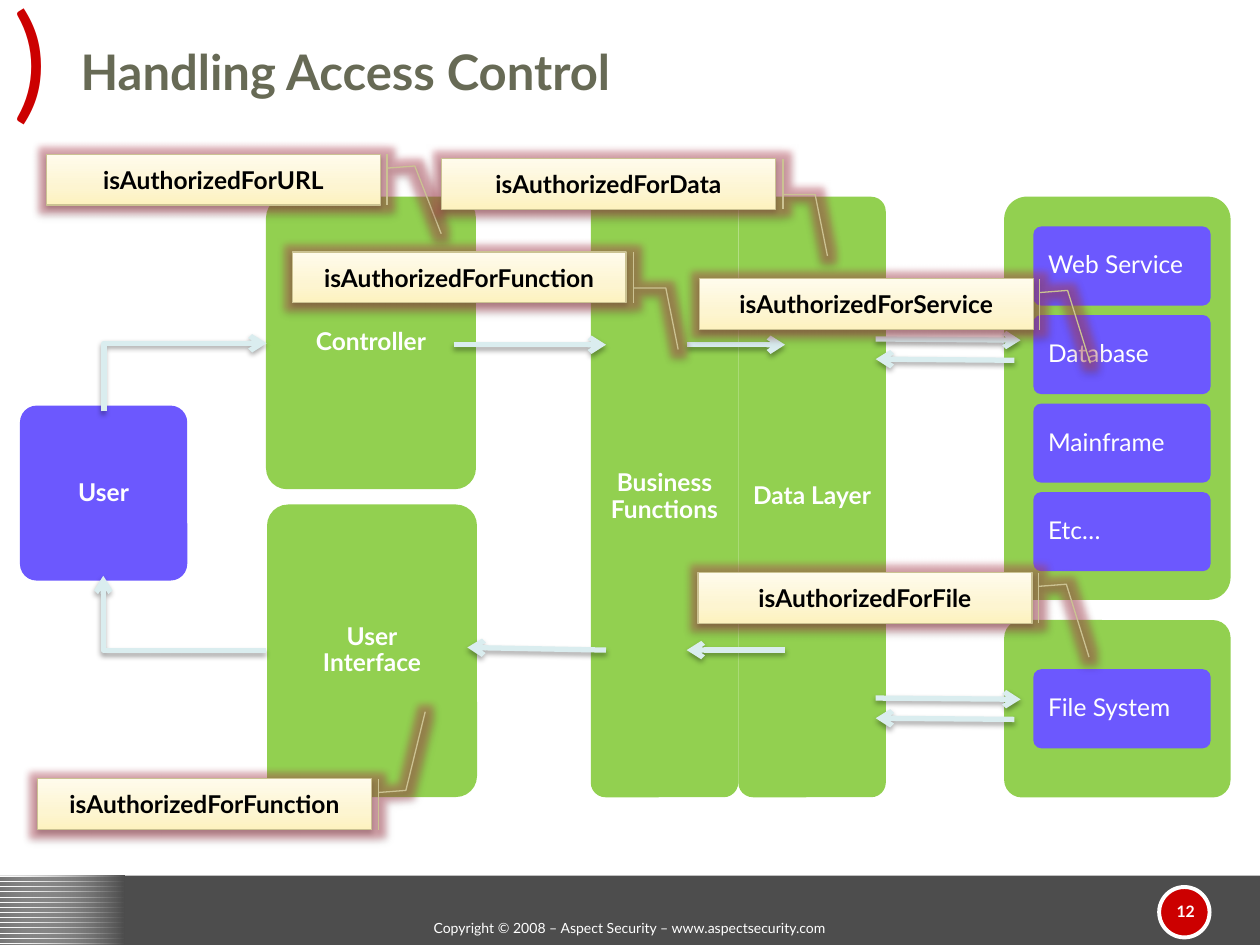
from lxml import etree
from pptx import Presentation
from pptx.dml.color import RGBColor
from pptx.enum.dml import MSO_PATTERN as Pattern
from pptx.enum.shapes import MSO_CONNECTOR as Link, MSO_SHAPE as Shape
from pptx.enum.text import MSO_ANCHOR as Anchor, MSO_AUTO_SIZE as Auto, PP_ALIGN as Align
from pptx.oxml import parse_xml
from pptx.oxml.ns import nsdecls, qn
from pptx.util import Pt

WHITE = RGBColor(0xFF, 0xFF, 0xFF)
BLACK = RGBColor(0, 0, 0)
GRAY = RGBColor(0x4D, 0x4D, 0x4D)
RED = RGBColor(0xCC, 0, 0)
OLIVE = RGBColor(0x67, 0x6A, 0x55)
GREEN = RGBColor(0x92, 0xD0, 0x50)
VIOLET = RGBColor(0x6C, 0x58, 0xFE)
ICE = RGBColor(0xDA, 0xED, 0xEF)
SAND = RGBColor(0xCB, 0xC2, 0x92)
ROSE = RGBColor(0xC0, 0x48, 0x5A)
CREAM = [(0, RGBColor(0xFD, 0xF2, 0xBF), 100),
         (35, RGBColor(0xFD, 0xF5, 0xD1), 100),
         (100, RGBColor(0xFF, 0xFB, 0xEC), 100)]
FADE = [(0, GRAY, 100), (100, WHITE, 23)]

# Leader bends of the callouts: y, x pairs as parts of the box
LOW = (0.271, 1.02, 0.229, 1.103, 1.665, 1.171)
SIDE = (0.711, 1.023, 0.709, 1.119, 1.92, 1.156)
URL = LOW[:4] + (1.565, 1.182)
HIGH = LOW[:4] + (-1.322, 1.161)


def put(obj, form):
    for key, value in form.items():
        setattr(obj, key, value)


def write(shape, text, color, size=14, bold=True, align=Align.CENTER, frame=None):
    """Fill a shape's text frame with one styled paragraph."""
    body = shape.text_frame
    put(body, {"word_wrap": True, "vertical_anchor": Anchor.MIDDLE, **(frame or {})})
    para = body.paragraphs[0]
    para.text = text
    para.alignment = align
    for run in para.runs:
        put(run.font, {"name": "Lato", "size": Pt(size), "bold": bold})
        run.font.color.rgb = color
    return para


def add_box(slide, kind, box, color=None, line=None, width=1):
    shape = slide.shapes.add_shape(kind, *map(Pt, box))
    shape.shadow.inherit = False
    if color is not None:
        shape.fill.solid()
        shape.fill.fore_color.rgb = color
    if line is None:
        shape.line.fill.background()
    else:
        shape.line.color.rgb = line
        shape.line.width = Pt(width)
    return shape


def add_card(slide, box, color, text="", **form):
    """Rounded panel or tile with an optional label."""
    card = add_box(slide, Shape.ROUNDED_RECTANGLE, box, color)
    card.adjustments[0] = 0.1
    if text:
        write(card, text, WHITE, **form).line_spacing = 0.9


def add_text(slide, box, text, color, size, **form):
    write(slide.shapes.add_textbox(*map(Pt, box)), text, color, size, **form)


def blend(shape, stops, angle):
    """Gradient fill with any number of stops; angle in degrees, clockwise."""
    marks = "".join(
        f'<a:gs pos="{pos * 1000}"><a:srgbClr val="{color}">'
        f'<a:alpha val="{alpha * 1000}"/></a:srgbClr></a:gs>'
        for pos, color, alpha in stops)
    fill = parse_xml(
        f'<a:gradFill {nsdecls("a")} rotWithShape="1"><a:gsLst>{marks}</a:gsLst>'
        f'<a:lin ang="{angle * 60000}" scaled="0"/></a:gradFill>')
    shape._element.spPr.find(qn("a:prstGeom")).addnext(fill)


def cast(shape, alpha, dist, glow=None):
    """Soft shadow straight below, with an optional glow."""
    props = shape._element.spPr
    for old in props.findall(qn("a:effectLst")):
        props.remove(old)
    halo = "" if glow is None else (
        f'<a:glow rad="{Pt(8)}"><a:srgbClr val="{glow}">'
        '<a:alpha val="40000"/></a:srgbClr></a:glow>')
    props.append(parse_xml(
        f'<a:effectLst {nsdecls("a")}>{halo}'
        f'<a:outerShdw blurRad="{Pt(3.1)}" dist="{Pt(dist)}" dir="5400000" rotWithShape="0">'
        f'<a:srgbClr val="000000"><a:alpha val="{alpha * 1000}"/></a:srgbClr>'
        '</a:outerShdw></a:effectLst>'))


def add_arrow(slide, ends, turn=None):
    """Arrow to the second point; a turn in degrees makes it a one-bend elbow."""
    kind = Link.STRAIGHT if turn is None else Link.ELBOW
    arrow = slide.shapes.add_connector(kind, *map(Pt, ends))
    arrow.line.color.rgb = ICE
    arrow.line.width = Pt(3)
    props = arrow._element.spPr
    etree.SubElement(props.find(qn("a:ln")), qn("a:tailEnd"), type="arrow")
    if turn is not None:
        props.find(qn("a:prstGeom")).set("prst", "bentConnector2")
        props.find(qn("a:xfrm")).set("rot", str(turn * 60000))
    cast(arrow, 35, 1.8)


def add_note(slide, left, top, text, bends):
    note = add_box(slide, Shape.LINE_CALLOUT_2_BORDER_AND_ACCENT_BAR,
                   (left, top, 190.8, 29), line=SAND, width=0.75)
    for i, bend in enumerate(bends):
        note.adjustments[i] = bend
    blend(note, CREAM, 270)
    cast(note, 38, 1.6, ROSE)
    write(note, text, BLACK)


def add_frame(slide):
    # Footer band with its striped, fading corner
    add_box(slide, Shape.RECTANGLE, (0, 500.4, 720, 39.6), GRAY)
    corner = (0, 500.4, 71.3, 39.6)
    stripes = add_box(slide, Shape.RECTANGLE, corner)
    stripes.fill.patterned()
    stripes.fill.pattern = Pattern.DARK_HORIZONTAL
    stripes.fill.fore_color.rgb = GRAY
    stripes.fill.back_color.rgb = WHITE
    blend(add_box(slide, Shape.RECTANGLE, corner), FADE[::-1] and
          [(0, WHITE, 23), (100, GRAY, 100)], 0)
    add_box(slide, Shape.OVAL, (662.4, 506.9, 28.8, 28.8), RED, WHITE, 2.25)
    # Bracket, copyright line and page number
    top = {"vertical_anchor": Anchor.TOP}
    add_text(slide, (0.7, -14.4, 41, 93.6), ")", RED, 72, bold=False,
             align=Align.LEFT, frame={**top, "word_wrap": False})
    add_text(slide, (0, 522, 720, 18), "Copyright © 2008 – Aspect Security – www.aspectsecurity.com",
             WHITE, 8, bold=False, frame=top)
    add_text(slide, (662.4, 506.2, 30.2, 28.8), "12", WHITE, 9)
    # Title
    title = slide.shapes.title
    put(title, dict(zip(("left", "top", "width", "height"), map(Pt, (38.9, 12.2, 681.1, 49)))))
    write(title, "Handling Access Control", OLIVE, 28, align=Align.LEFT,
          frame={"vertical_anchor": Anchor.BOTTOM, "auto_size": Auto.NONE})


def add_cards(slide):
    slim = {"frame": {"margin_left": 0, "margin_right": 0}}
    # Layers of the system
    add_card(slide, (573.8, 354.3, 129.4, 101.4), GREEN)
    add_card(slide, (573.8, 112.4, 129.4, 230.4), GREEN)
    add_card(slide, (152, 112.4, 120, 167.2), GREEN, "Controller")
    add_card(slide, (152.6, 288.3, 120, 167.2), GREEN, "User\nInterface")
    for left, text in ((337.6, "Business Functions"), (421.9, "Data Layer")):
        add_card(slide, (left, 112.4, 84.3, 343.2), GREEN, text, **slim)
    # Back-end tiles, four of them on an even step
    names = ("Web Service", "Database", "Mainframe", "Etc…")
    tiles = [(129.4 + 50.6 * i, name) for i, name in enumerate(names)]
    for top, name in tiles + [(382.4, "File System")]:
        add_card(slide, (590.5, top, 101.3, 45.2), VIOLET, name, bold=False, align=Align.LEFT)
    add_card(slide, (11.4, 231.8, 95.6, 100), VIOLET, "User")


def main():
    deck = Presentation()
    put(deck, {"slide_width": Pt(720), "slide_height": Pt(540)})
    slide = deck.slides.add_slide(deck.slide_layouts[5])
    add_frame(slide)
    add_cards(slide)

    # Flow between the layers
    add_arrow(slide, (125.3, 262.1, 86.4, 169.2), 90)
    add_arrow(slide, (59, 329, 151.9, 371.5), 180)
    for ends in ((259.2, 197, 346.3, 197), (392.4, 197, 448.6, 197),
                 (346.3, 371.5, 267.1, 370), (448.6, 371.5, 392.4, 371.5)):
        add_arrow(slide, ends)
    for top in (193.7, 398.9):
        add_arrow(slide, (500.4, top, 583.2, top + 0.7))
        add_arrow(slide, (579.6, top + 12.2, 500.4, top + 11.5))

    # Access checks
    for note in ((26.6, 88.2, "isAuthorizedForURL", URL),
                 (21.5, 445, "isAuthorizedForFunction", HIGH),
                 (167, 144, "isAuthorizedForFunction", SIDE),
                 (399.6, 159.3, "isAuthorizedForService", LOW),
                 (252.3, 90.6, "isAuthorizedForData", SIDE),
                 (398.9, 327.2, "isAuthorizedForFile", LOW)):
        add_note(slide, *note)

    deck.save("out.pptx")


if __name__ == "__main__":
    main()
